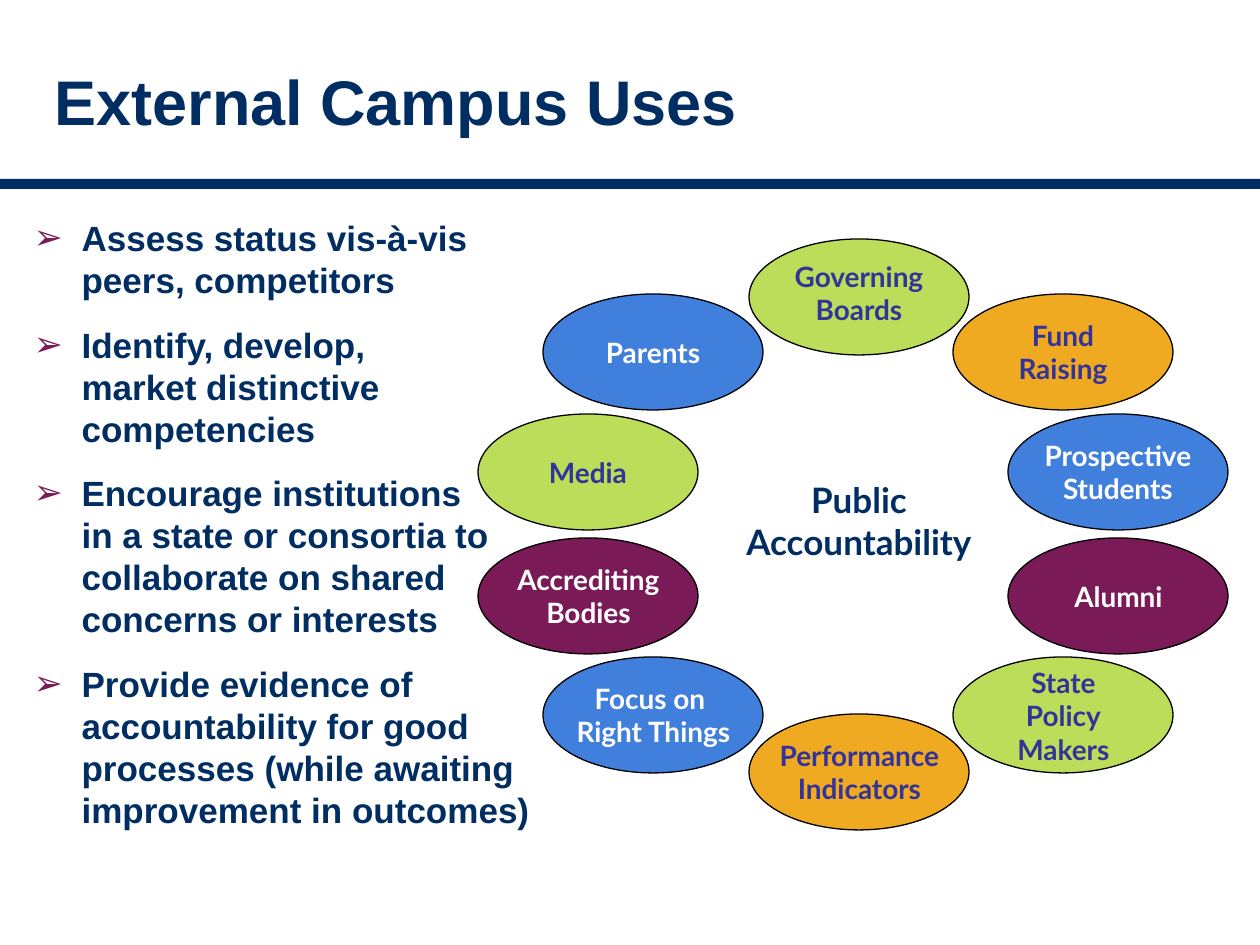
from dataclasses import dataclass
from lxml import etree
from pptx import Presentation
from pptx import util as u
from pptx.dml.color import RGBColor
from pptx.enum import shapes, text
from pptx.oxml import ns

PX = 914400 // 126


@dataclass(frozen=True)
class Theme:
    navy: str = "002D62"
    plum: str = "7A1A57"
    blue: str = "417FDD"
    gold: str = "EFAA22"
    lime: str = "99CC00"
    ink: str = "333399"
    white: str = "FFFFFF"
    black: str = "000000"
    head: str = "Arial"
    label: str = "Lato"
    big: int = 36
    mid: int = 20
    small: int = 16


T = Theme()
TITLE = "External Campus Uses"
POINTS = [
    "Assess status vis-à-vis \npeers, competitors",
    "Identify, develop, \nmarket distinctive \ncompetencies",
    "Encourage institutions \nin a state or consortia to collaborate on shared "
    "concerns or interests",
    "Provide evidence of \naccountability for good \nprocesses (while awaiting "
    "improvement in outcomes)",
]
HUB = "Public\nAccountability"

# Centres of the ring's columns and rows
COLS = [588, 653, 859, 1063, 1118]
ROWS = [297, 352, 472, 596, 715, 772]
OVAL = (220, 116)
# Label, column, row, fill, label width
RING = [
    ("Governing\nBoards", 2, 0, T.lime, 170),
    ("Parents", 1, 1, T.blue, 134),
    ("Fund\nRaising", 3, 1, T.gold, 130),
    ("Media", 0, 2, T.lime, 110),
    ("Prospective\nStudents", 4, 2, T.blue, 190),
    ("Accrediting\nBodies", 0, 3, T.plum, 185),
    ("Alumni", 4, 3, T.plum, 125),
    ("Focus on \nRight Things", 1, 4, T.blue, 203),
    ("State\nPolicy\nMakers", 3, 4, T.lime, 179),
    ("Performance\nIndicators", 2, 5, T.gold, 205),
]
DARK = (T.blue, T.plum)


def rgb(code):
    return RGBColor.from_string(code)


def box(x, y, w, h):
    return [u.Emu(n * PX) for n in (x, y, w, h)]


def around(x, y, w, h):
    """Box of the given size centred on x, y."""
    return box(x - w // 2, y - h // 2, w, h)


def place(item, spot):
    item.left, item.top, item.width, item.height = spot


def write(para, words, font, size, color, align):
    para.alignment = align
    for i, line in enumerate(words.split("\n")):
        if i:
            para.add_line_break()
        run = para.add_run()
        run.text = line
        run.font.name, run.font.size, run.font.bold = font, u.Pt(size), True
        run.font.color.rgb = rgb(color)


def add_shape(slide, kind, spot, fill=None, line=None):
    item = slide.shapes.add_shape(kind, *spot)
    item.shadow.inherit = False
    if fill:
        item.fill.solid()
        item.fill.fore_color.rgb = rgb(fill)
    else:
        item.fill.background()
    if line:
        item.line.color.rgb = rgb(line)
        item.line.width = u.Pt(0.75)
    else:
        item.line.fill.background()
    return item


def fade(item, share):
    """Set the opacity of a solid fill, in percent."""
    color = item.fill._xPr.find(".//" + ns.qn("a:srgbClr"))
    etree.SubElement(color, ns.qn("a:alpha"), val=str(share * 1000))


def bullet(para):
    para.space_before, para.space_after = u.Pt(4), u.Pt(9)
    props = para._p.get_or_add_pPr()
    props.set("marL", str(48 * PX))
    props.set("indent", str(-48 * PX))
    tint = etree.SubElement(props, ns.qn("a:buClr"))
    etree.SubElement(tint, ns.qn("a:srgbClr"), val=T.plum)
    etree.SubElement(props, ns.qn("a:buFont"), typeface=T.head)
    etree.SubElement(props, ns.qn("a:buChar"), char="➢")


def add_text(slide):
    left = text.PP_ALIGN.LEFT
    title, body = slide.shapes.title, slide.placeholders[1]
    place(title, box(42, 32, 1176, 136))
    place(body, box(21, 210, 544, 725))
    for item in (title, body):
        item.text_frame.word_wrap = True
        item.text_frame.auto_size = text.MSO_AUTO_SIZE.NONE
    title.text_frame.vertical_anchor = text.MSO_ANCHOR.MIDDLE
    write(title.text_frame.paragraphs[0], TITLE, T.head, T.big, T.navy, left)
    for i, words in enumerate(POINTS):
        frame = body.text_frame
        para = frame.add_paragraph() if i else frame.paragraphs[0]
        bullet(para)
        write(para, words, T.head, T.mid, T.navy, left)


def add_ring(slide):
    mid = text.PP_ALIGN.CENTER
    kind = shapes.MSO_SHAPE
    hub = add_shape(slide, kind.FLOWCHART_PROCESS, around(859, 520, 274, 94))
    hub.text_frame.word_wrap = False
    hub.text_frame.vertical_anchor = text.MSO_ANCHOR.MIDDLE
    write(hub.text_frame.paragraphs[0], HUB, T.label, T.mid, T.navy, mid)
    for words, col, row, fill, width in RING:
        x, y = COLS[col], ROWS[row]
        oval = add_shape(slide, kind.OVAL, around(x, y, *OVAL), fill, T.black)
        if fill == T.lime:
            fade(oval, 65)
        lines = words.count("\n") + 1
        lift = 0 if row else 4
        spot = around(x, y - lift, width, 14 + 33 * lines)
        frame = slide.shapes.add_textbox(*spot).text_frame
        frame.word_wrap = lines > 2
        frame.auto_size = text.MSO_AUTO_SIZE.SHAPE_TO_FIT_TEXT
        color = T.white if fill in DARK else T.ink
        write(frame.paragraphs[0], words, T.label, T.small, color, mid)


def main():
    deck = Presentation()
    deck.slide_width, deck.slide_height = u.Inches(10), u.Inches(7.5)
    slide = deck.slides.add_slide(deck.slide_layouts[1])
    add_shape(slide, shapes.MSO_SHAPE.RECTANGLE, box(0, 179, 1260, 10), T.navy)
    add_text(slide)
    add_ring(slide)
    deck.save("out.pptx")


if __name__ == "__main__":
    main()
